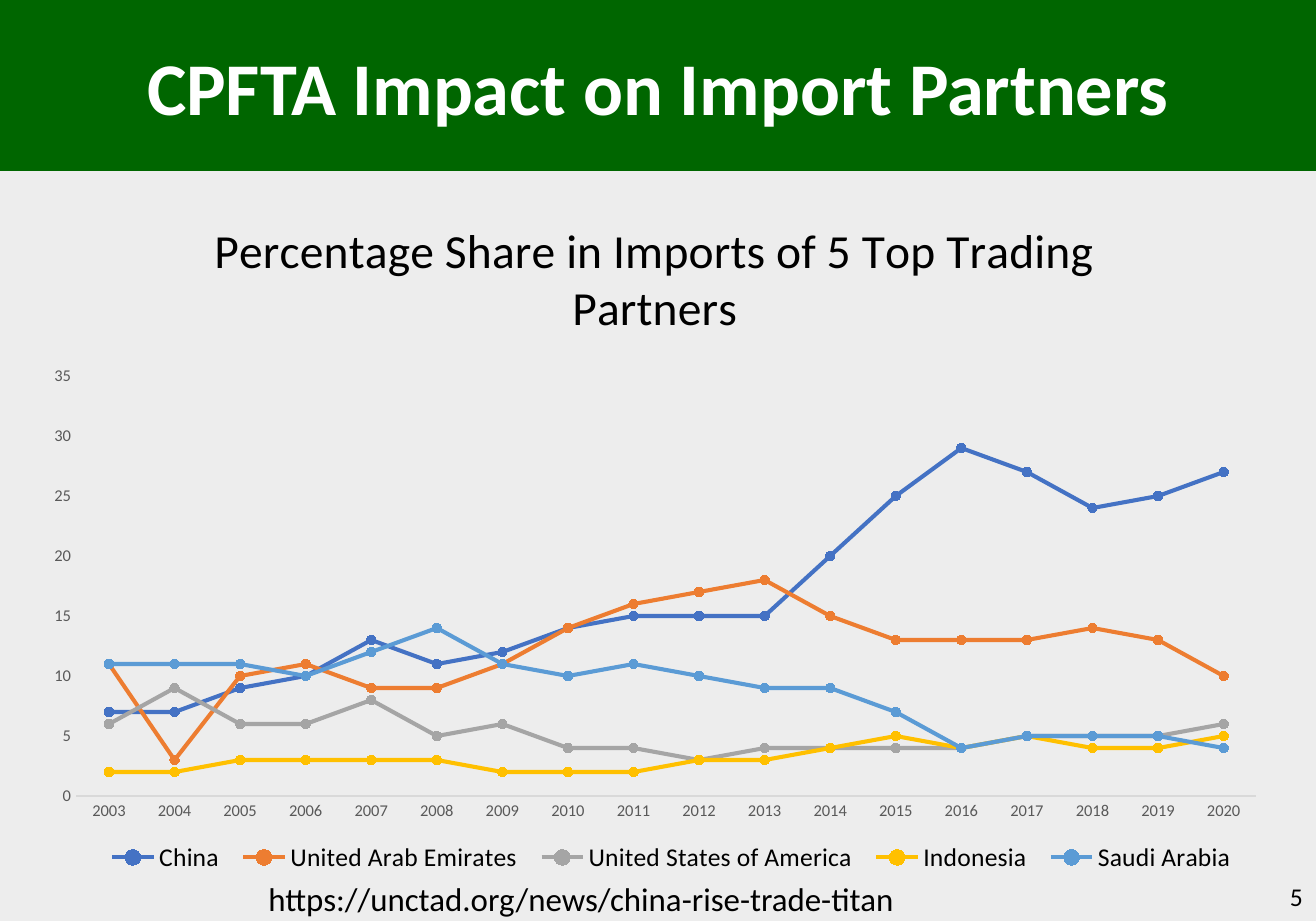
from lxml import etree
from pptx import Presentation
from pptx.chart.data import CategoryChartData
from pptx.dml.color import RGBColor
from pptx.enum.chart import XL_CHART_TYPE, XL_LEGEND_POSITION, XL_MARKER_STYLE, XL_TICK_MARK
from pptx.enum.text import MSO_ANCHOR, MSO_AUTO_SIZE, PP_ALIGN
from pptx.oxml.ns import qn
from pptx.util import Cm, Pt

LEFT, CENTER, RIGHT = PP_ALIGN.LEFT, PP_ALIGN.CENTER, PP_ALIGN.RIGHT
TOP, MIDDLE = MSO_ANCHOR.TOP, MSO_ANCHOR.MIDDLE
NO_AUTOFIT = MSO_AUTO_SIZE.NONE
LINE_MARKERS = XL_CHART_TYPE.LINE_MARKERS
LEGEND_BOTTOM = XL_LEGEND_POSITION.BOTTOM
CIRCLE = XL_MARKER_STYLE.CIRCLE
NO_TICK = XL_TICK_MARK.NONE

FONT = "Calibri"
GREEN, PALE_GREY, WHITE, BLACK = "006600", "EDEDED", "FFFFFF", "000000"
AXIS_TEXT, AXIS_LINE = "595959", "D9D9D9"
SLIDE_WIDTH, SLIDE_HEIGHT = 25.4, 17.78

YEARS = [str(year) for year in range(2003, 2021)]
IMPORT_SHARES = [
    ("China", "4472C4",
     (7, 7, 9, 10, 13, 11, 12, 14, 15, 15, 15, 20, 25, 29, 27, 24, 25, 27)),
    ("United Arab Emirates", "ED7D31",
     (11, 3, 10, 11, 9, 9, 11, 14, 16, 17, 18, 15, 13, 13, 13, 14, 13, 10)),
    ("United States of America", "A5A5A5",
     (6, 9, 6, 6, 8, 5, 6, 4, 4, 3, 4, 4, 4, 4, 5, 5, 5, 6)),
    ("Indonesia", "FFC000",
     (2, 2, 3, 3, 3, 3, 2, 2, 2, 3, 3, 4, 5, 4, 5, 4, 4, 5)),
    ("Saudi Arabia", "5B9BD5",
     (11, 11, 11, 10, 12, 14, 11, 10, 11, 10, 9, 9, 7, 4, 5, 5, 5, 4)),
]


def color(hex_string):
    return RGBColor.from_string(hex_string)


def fill_solid(fill, hex_string):
    fill.solid()
    fill.fore_color.rgb = color(hex_string)


def format_font(font, size, hex_string=BLACK, bold=False):
    font.name, font.size, font.bold = FONT, Pt(size), bold
    font.color.rgb = color(hex_string)


def write_text(frame, text, size, hex_string=BLACK, bold=False, align=LEFT, anchor=TOP):
    frame.word_wrap = True
    frame.auto_size = NO_AUTOFIT
    frame.vertical_anchor = anchor
    paragraph = frame.paragraphs[0]
    paragraph.text = text
    paragraph.alignment = align
    format_font(paragraph.font, size, hex_string, bold)


def add_title_band(slide, left, top, width, height):
    title = slide.shapes.title
    title.left, title.top, title.width, title.height = map(Cm, (left, top, width, height))
    fill_solid(title.fill, GREEN)
    write_text(title.text_frame, "CPFTA Impact on Import Partners", 40.7,
               WHITE, bold=True, align=CENTER, anchor=MIDDLE)


def place_chart_part(part, position, chart_box, chart_size, **settings):
    """Fix a chart part at a box in cm, measured from the chart's corner."""
    layout = part.find(qn("c:layout"))
    if layout is None:
        layout = etree.Element(qn("c:layout"))
        part.insert(position, layout)
    manual = etree.SubElement(layout, qn("c:manualLayout"))
    settings.update(xMode="edge", yMode="edge")
    for tag, length, whole in zip("xywh", chart_box, chart_size * 2):
        settings[tag] = round(length / whole, 4)
    for tag, value in settings.items():
        etree.SubElement(manual, qn(f"c:{tag}"), val=str(value))


def add_import_chart(slide, left, top, width, height):
    shares = CategoryChartData()
    shares.categories = YEARS
    for partner, _, values in IMPORT_SHARES:
        shares.add_series(partner, values)
    chart = slide.shapes.add_chart(
        LINE_MARKERS, Cm(left), Cm(top), Cm(width), Cm(height), shares).chart
    format_font(chart.font, 10)

    chart.has_title = True
    heading = chart.chart_title.text_frame.paragraphs[0]
    heading.text = "Percentage Share in Imports of 5 Top Trading Partners"
    format_font(heading.runs[0].font, 26)
    chart.chart_title.include_in_layout = False

    chart.has_legend = True
    chart.legend.position = LEGEND_BOTTOM
    chart.legend.include_in_layout = False
    format_font(chart.legend.font, 14)

    years, percent = chart.category_axis, chart.value_axis
    for axis in (years, percent):
        axis.has_major_gridlines = False
        axis.major_tick_mark = axis.minor_tick_mark = NO_TICK
        format_font(axis.tick_labels.font, 9, AXIS_TEXT)
    years.format.line.color.rgb = color(AXIS_LINE)
    years.format.line.width = Pt(0.75)
    percent.format.line.fill.background()
    percent.minimum_scale, percent.maximum_scale, percent.major_unit = 0, 35, 5

    plot = chart.plots[0]
    plot.vary_by_categories = False
    for series, (_, hue, _) in zip(plot.series, IMPORT_SHARES):
        series.smooth = False
        series.format.line.color.rgb = color(hue)
        series.format.line.width = Pt(2.25)
        series.marker.style, series.marker.size = CIRCLE, 5
        fill_solid(series.marker.format.fill, hue)
        series.marker.format.line.color.rgb = color(hue)

    size = (width, height)
    place_chart_part(plot._element.getparent(), 0, (0.91, 3.63, 22.78, 8.11), size,
                     layoutTarget="inner")
    place_chart_part(chart.legend._element, 1, (1.3, 12.55, 22.2, 0.75), size)


def add_text(slide, text, left, top, width, height, **text_format):
    box = slide.shapes.add_textbox(Cm(left), Cm(top), Cm(width), Cm(height))
    write_text(box.text_frame, text, **text_format)


def add_footer(slide, left, top, width, height):
    number_width = 5.7
    add_text(slide, "5", left + width - number_width, top, number_width, height,
             size=14, align=RIGHT, anchor=MIDDLE)
    add_text(slide, "https://unctad.org/news/china-rise-trade-titan",
             left + 4.93, top, 16.2, height, size=18)


def main():
    presentation = Presentation()
    presentation.slide_width, presentation.slide_height = Cm(SLIDE_WIDTH), Cm(SLIDE_HEIGHT)
    title_only = presentation.slide_layouts[5]
    slide = presentation.slides.add_slide(title_only)
    fill_solid(slide.background.fill, PALE_GREY)
    add_title_band(slide, 0, 0, SLIDE_WIDTH, 3.3)
    add_import_chart(slide, 0.56, 3.63, 24.16, 13.49)
    add_footer(slide, 0, 16.84, SLIDE_WIDTH, 0.94)
    presentation.save("out.pptx")


if __name__ == "__main__":
    main()
